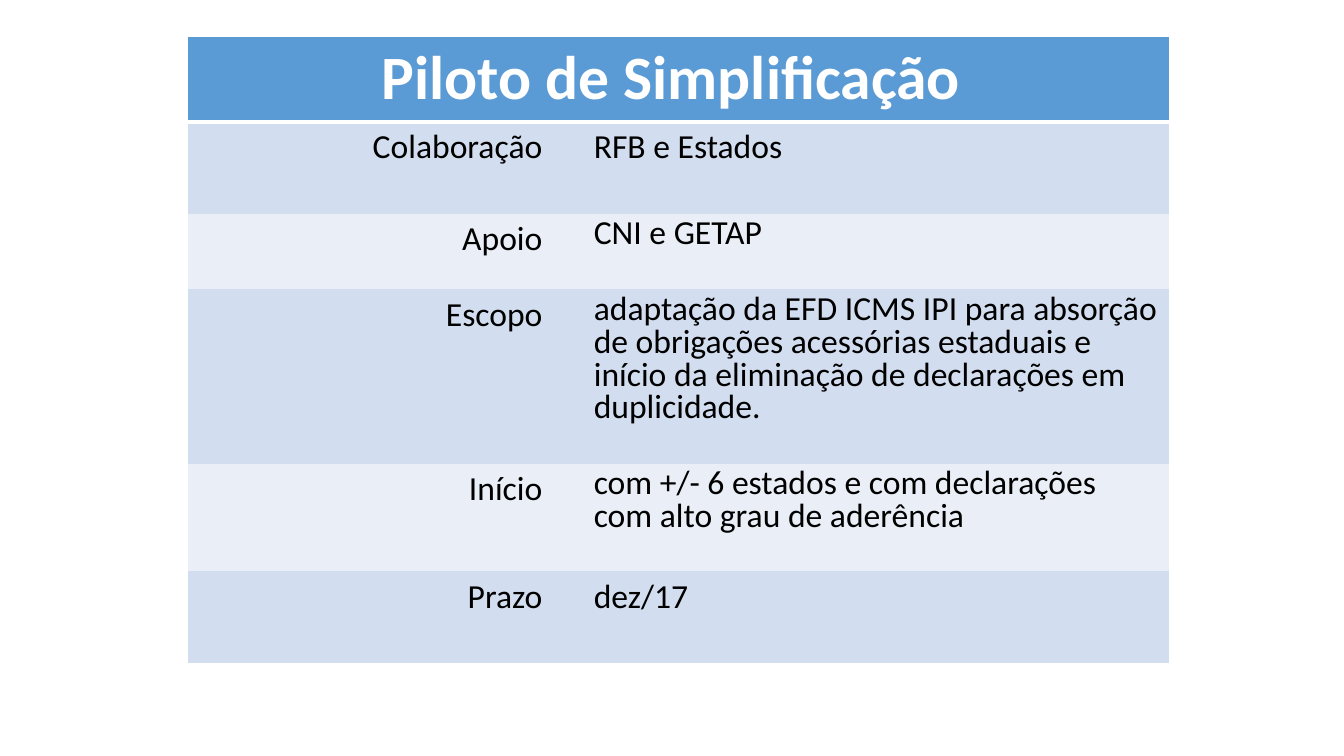
from lxml import etree
from pptx import Presentation
from pptx.dml.color import RGBColor
from pptx.enum import text
from pptx.oxml.ns import qn
from pptx.util import Inches, Pt

TITLE = "Piloto de Simplificação "
# label, description, row height in inches, line spacing of the description
ROWS = [
    ("Colaboração", "RFB e Estados", 0.91, 1.0),
    ("Apoio", "CNI e GETAP", 0.75, 0.8),
    ("Escopo", "adaptação da EFD ICMS IPI para absorção de obrigações acessórias "
     "estaduais e início da eliminação de declarações em duplicidade.", 1.73, 0.8),
    ("Início", "com +/- 6 estados e com declarações com alto grau de aderência",
     1.07, 0.8),
    ("Prazo", "dez/17", 0.91, 1.0),
]
COLORS = {"header": "5B9BD5", "odd": "D2DEEF", "even": "EAEFF7",
          "white": "FFFFFF", "black": "000000"}
COLUMN_WIDTHS = [3.62, 0.31, 5.81]
LEFT, TOP, HEADER_HEIGHT = 1.86, 0.36, 0.85


def set_borders(cell, widths):
    """Draw white edges of the given point widths; edges not named are hidden."""
    properties = cell._tc.get_or_add_tcPr()
    for edge in "LRTB":
        line = etree.SubElement(properties, qn(f"a:ln{edge}"))
        if edge in widths:
            line.set("w", str(Pt(widths[edge])))
            fill = etree.SubElement(line, qn("a:solidFill"))
            etree.SubElement(fill, qn("a:srgbClr"), val=COLORS["white"])
        else:
            etree.SubElement(line, qn("a:noFill"))


def format_cell(cell, fill, borders):
    set_borders(cell, borders)
    cell.fill.solid()
    cell.fill.fore_color.rgb = RGBColor.from_string(COLORS[fill])


def write(cell, content, size=24, color="black", bold=False,
          align=text.PP_ALIGN.LEFT, spacing=1.0):
    paragraph = cell.text_frame.paragraphs[0]
    paragraph.alignment = align
    paragraph.line_spacing = spacing
    run = paragraph.add_run()
    run.text = content
    run.font.name = "Calibri"
    run.font.size = Pt(size)
    run.font.bold = bold
    run.font.color.rgb = RGBColor.from_string(COLORS[color])


def main():
    presentation = Presentation()
    presentation.slide_width = Inches(13.33)
    presentation.slide_height = Inches(7.5)
    slide = presentation.slides.add_slide(presentation.slide_layouts[6])

    heights = [HEADER_HEIGHT] + [row[2] for row in ROWS]
    table = slide.shapes.add_table(
        len(heights), len(COLUMN_WIDTHS), Inches(LEFT), Inches(TOP),
        Inches(sum(COLUMN_WIDTHS)), Inches(sum(heights))).table
    table.first_row = table.horz_banding = False
    for column, width in zip(table.columns, COLUMN_WIDTHS):
        column.width = Inches(width)
    for row, height in zip(table.rows, heights):
        row.height = Inches(height)

    header = table.cell(0, 0)
    header.merge(table.cell(0, 2))
    for cell in table.rows[0].cells:
        format_cell(cell, "header", {"L": 1, "R": 1, "T": 1, "B": 3})
    write(header, TITLE, size=44, color="white", bold=True,
          align=text.PP_ALIGN.CENTER)

    for index, (label, description, _, spacing) in enumerate(ROWS, start=1):
        cells = list(table.rows[index].cells)
        outer_edges = [{"L": 1}, {}, {"R": 1}]
        for cell, borders in zip(cells, outer_edges):
            if index == 1:
                borders["T"] = 3
            if index == len(ROWS):
                borders["B"] = 1
            format_cell(cell, "odd" if index % 2 else "even", borders)
        write(cells[0], label, align=text.PP_ALIGN.RIGHT)
        write(cells[2], description, spacing=spacing)

    presentation.save("out.pptx")


if __name__ == "__main__":
    main()
